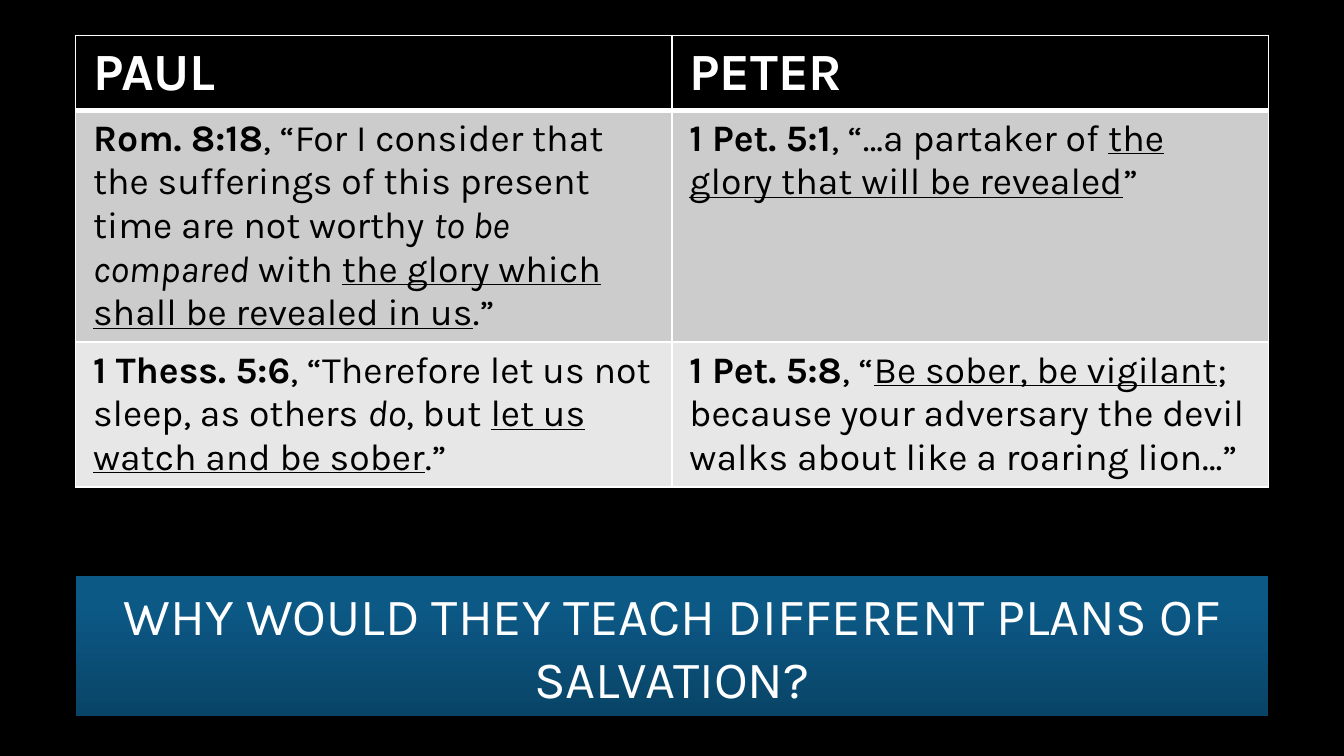
import pptx
import pptx.util
import pptx.dml.color
import pptx.enum.shapes
import pptx.enum.text
from lxml import etree

Pt = pptx.util.Pt
RGB = pptx.dml.color.RGBColor
BLACK = RGB(0x00, 0x00, 0x00)
WHITE = RGB(0xFF, 0xFF, 0xFF)
GRAY = RGB(0xCC, 0xCC, 0xCC)
PALE = RGB(0xE7, 0xE7, 0xE7)
NAVY = RGB(0x09, 0x44, 0x67)
BLUE = RGB(0x0C, 0x59, 0x86)
FONT = "Karla"
NS = "http://schemas.openxmlformats.org/drawingml/2006/main"

# Content: each cell is a list of (text, style), with b, i or u as style
ROWS = [
    [[("PAUL", "b")], [("PETER", "b")]],
    [
        [("Rom. 8:18", "b"),
         (", “For I consider that the sufferings of this present time are not worthy ", ""),
         ("to be compared", "i"), (" with ", ""),
         ("the glory which shall be revealed in us", "u"), (".”", "")],
        [("1 Pet. 5:1", "b"), (", “…a partaker of ", ""),
         ("the glory that will be revealed", "u"), ("”", "")],
    ],
    [
        [("1 Thess. 5:6", "b"), (", “Therefore let us not sleep, as others ", ""),
         ("do", "i"), (", but ", ""), ("let us watch and be sober", "u"), (".”", "")],
        [("1 Pet. 5:8", "b"), (", “", ""), ("Be sober, be vigilant", "u"),
         ("; because your adversary the devil walks about like a roaring lion…”", "")],
    ],
]
# Row look: height, fill, text size, text colour
LOOKS = [(39, BLACK, 28, WHITE), (124, GRAY, 20, BLACK), (77, PALE, 20, BLACK)]
ASK = [("WHY WOULD THEY TEACH DIFFERENT PLANS OF SALVATION?", "")]

WIDE, HIGH = 720, 405
LEFT = 40.5
SPAN = WIDE - 2 * LEFT


def write(frame, runs, size, color, align=None):
    para = frame.paragraphs[0]
    para.alignment = align
    for text, style in runs:
        run = para.add_run()
        run.text = text
        font = run.font
        font.name, font.size = FONT, Pt(size)
        font.color.rgb = color
        font.bold, font.italic = style == "b", style == "i"
        font.underline = style == "u"


def edge(cell, widths):
    """Draw white cell borders; they must come before the fill."""
    props = cell._tc.get_or_add_tcPr()
    for spot, (side, width) in enumerate(widths.items()):
        line = etree.Element(f"{{{NS}}}ln{side}", w=str(Pt(width)))
        fill = etree.SubElement(line, f"{{{NS}}}solidFill")
        etree.SubElement(fill, f"{{{NS}}}srgbClr", val=str(WHITE))
        props.insert(spot, line)


# Slide
deck = pptx.Presentation()
deck.slide_width, deck.slide_height = Pt(WIDE), Pt(HIGH)
slide = deck.slides.add_slide(deck.slide_layouts[6])
slide.background.fill.solid()
slide.background.fill.fore_color.rgb = BLACK

# Verse table
tall = sum(look[0] for look in LOOKS)
table = slide.shapes.add_table(
    len(ROWS), 2, Pt(LEFT), Pt(19), Pt(SPAN), Pt(tall)).table
for col in table.columns:
    col.width = Pt(SPAN / 2)
for r, (row, look) in enumerate(zip(ROWS, LOOKS)):
    high, fill, size, color = look
    table.rows[r].height = Pt(high)
    for c, runs in enumerate(row):
        cell = table.cell(r, c)
        cell.margin_left = cell.margin_right = Pt(9.36)
        cell.margin_top = cell.margin_bottom = Pt(3.6)
        cell.fill.solid()
        cell.fill.fore_color.rgb = fill
        edge(cell, {"L": 1, "R": 1, "T": 3 if r == 1 else 1, "B": 3 if r == 0 else 1})
        write(cell.text_frame, runs, size, color)

# Question banner, darker at the bottom
box = slide.shapes.add_shape(
    pptx.enum.shapes.MSO_SHAPE.RECTANGLE, Pt(LEFT), Pt(308.7), Pt(SPAN), Pt(75))
box.shadow.inherit = False
box.line.fill.background()
box.fill.gradient()
box.fill.gradient_angle = 90
for stop, color, place in zip(box.fill.gradient_stops, (NAVY, BLUE), (0, 0.8)):
    stop.color.rgb = color
    stop.position = place
frame = box.text_frame
frame.word_wrap = True
frame.vertical_anchor = pptx.enum.text.MSO_ANCHOR.MIDDLE
write(frame, ASK, 28, WHITE, pptx.enum.text.PP_ALIGN.CENTER)

deck.save("out.pptx")
